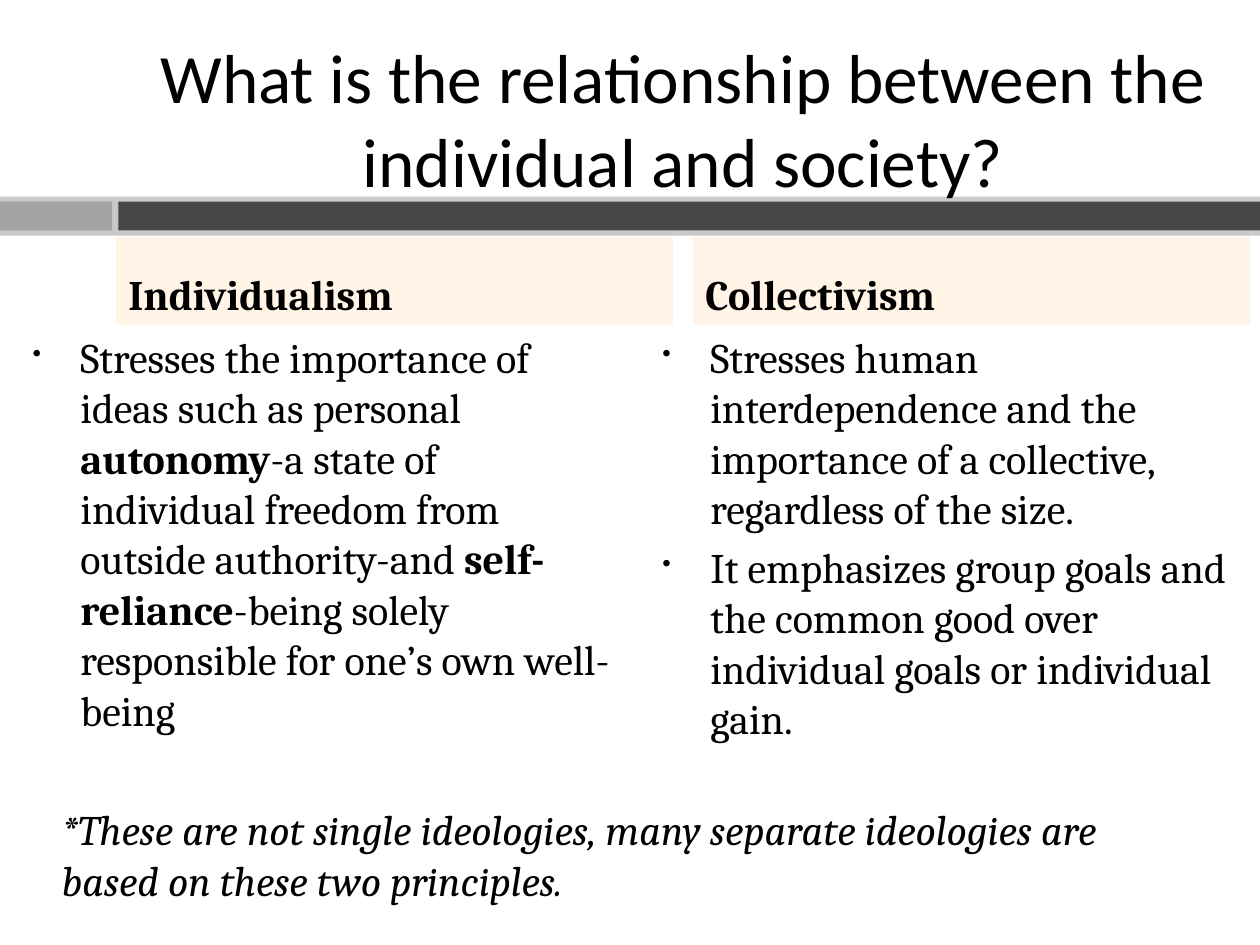
from dataclasses import dataclass

from lxml.etree import SubElement
from pptx import Presentation
from pptx.dml.color import RGBColor
from pptx.enum.shapes import MSO_SHAPE
from pptx.enum.text import MSO_ANCHOR, PP_ALIGN
from pptx.oxml.ns import qn
from pptx.util import Inches, Pt


@dataclass(frozen=True)
class Theme:
    ink: str = "000000"
    band: str = "C9C9C9"
    block: str = "A3A3A3"
    bar: str = "464646"
    tint: str = "FF9900"
    clear: int = 10
    head: str = "Calibri"
    body: str = "Cambria"
    large: float = 39.6
    size: float = 24
    gap: float = 4.8
    indent: float = 0.38
    dot: int = 60


class Deck:
    """Draws the elements of one slide in a shared style."""

    def __init__(self, slide, theme):
        self.slide = slide
        self.theme = theme

    def rect(self, box, color, alpha=None):
        shape = self.slide.shapes.add_shape(MSO_SHAPE.RECTANGLE, *map(Inches, box))
        shape.shadow.inherit = False
        shape.line.fill.background()
        shape.fill.solid()
        shape.fill.fore_color.rgb = RGBColor.from_string(color)
        if alpha is not None:
            tone = shape.fill._xPr.find(".//" + qn("a:srgbClr"))
            SubElement(tone, qn("a:alpha"), val=str(alpha * 1000))
        return shape

    def frame(self, box, anchor=MSO_ANCHOR.TOP):
        frame = self.slide.shapes.add_textbox(*map(Inches, box)).text_frame
        frame.word_wrap = True
        frame.vertical_anchor = anchor
        return frame

    def style(self, run, name=None, size=None, bold=False, italic=False):
        font = run.font
        font.name = name or self.theme.body
        font.size = Pt(size or self.theme.size)
        font.bold = bold
        font.italic = italic
        font.color.rgb = RGBColor.from_string(self.theme.ink)

    def title(self, box, text):
        frame = self.frame(box, MSO_ANCHOR.MIDDLE)
        frame.text = text
        para = frame.paragraphs[0]
        para.alignment = PP_ALIGN.CENTER
        self.style(para.runs[0], self.theme.head, self.theme.large)

    def label(self, box, text):
        frame = self.rect(box, self.theme.tint, self.theme.clear).text_frame
        frame.word_wrap = True
        frame.vertical_anchor = MSO_ANCHOR.BOTTOM
        frame.text = text
        para = frame.paragraphs[0]
        para.alignment = PP_ALIGN.LEFT
        para.space_before = Pt(self.theme.gap)
        self.style(para.runs[0], bold=True)

    def bullets(self, box, items):
        frame = self.frame(box)
        for row, parts in enumerate(items):
            para = frame.add_paragraph() if row else frame.paragraphs[0]
            para.space_before = Pt(self.theme.gap)
            self.bullet(para)
            for spot, text in enumerate(parts):
                run = para.add_run()
                run.text = text
                self.style(run, bold=spot % 2 == 1)

    def bullet(self, para):
        props = para._p.get_or_add_pPr()
        indent = Inches(self.theme.indent)
        props.set("marL", str(indent))
        props.set("indent", str(-indent))
        color = SubElement(props, qn("a:buClr"))
        SubElement(color, qn("a:srgbClr"), val=self.theme.ink)
        SubElement(props, qn("a:buSzPct"), val=str(self.theme.dot * 1000))
        SubElement(props, qn("a:buChar"), char="•")

    def note(self, box, text):
        frame = self.frame(box)
        frame.text = text
        self.style(frame.paragraphs[0].runs[0], italic=True)


def main():
    show = Presentation()
    show.slide_width, show.slide_height = Inches(10), Inches(7.5)
    theme = Theme()
    deck = Deck(show.slides.add_slide(show.slide_layouts[6]), theme)

    deck.rect((0, 1.56, 10, 0.31), theme.band)
    deck.rect((0, 1.6, 0.89, 0.23), theme.block)
    deck.rect((0.94, 1.6, 9.06, 0.23), theme.bar)
    deck.title((0.92, 0.31, 9, 1.25),
               "What is the relationship between the individual and society?")

    columns = [
        ("Individualism", 0.92, 0.16, 4.81, [
            ["Stresses the importance of ideas such as personal ", "autonomy",
             "-a state of individual freedom from outside authority-and ",
             "self-reliance", "-being solely responsible for one’s own well-being"],
        ]),
        ("Collectivism", 5.5, 5.16, 4.77, [
            ["Stresses human interdependence and the importance of a collective, "
             "regardless of the size."],
            ["It emphasizes group goals and the common good over individual goals "
             "or individual gain."],
        ]),
    ]
    for name, edge, left, width, items in columns:
        deck.label((edge, 1.88, 4.42, 0.7), name)
        deck.bullets((left, 2.58, width, 4.77), items)

    deck.note((0.39, 6.33, 8.91, 0.91),
              "*These are not single ideologies, many separate ideologies are "
              "based on these two principles.")
    show.save("out.pptx")


if __name__ == "__main__":
    main()
